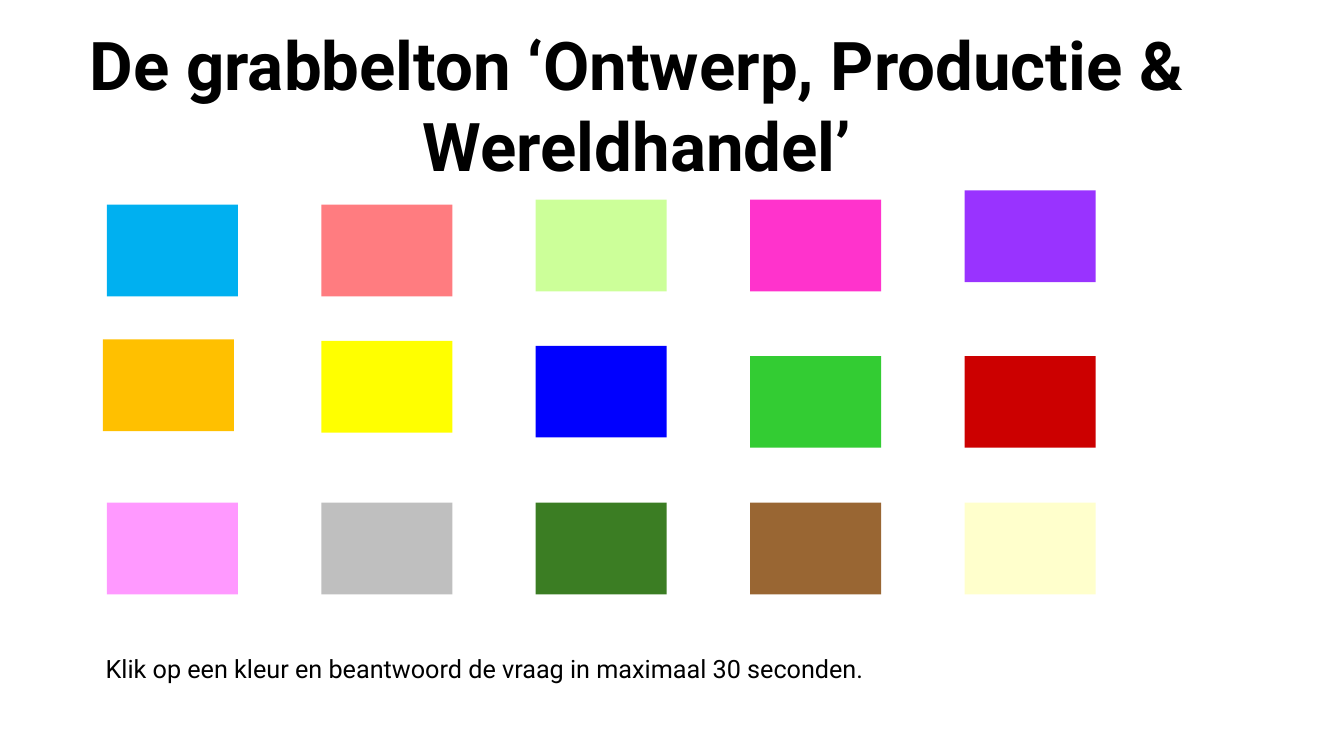
from dataclasses import dataclass

from pptx import Presentation
from pptx import util as u
from pptx.dml import color
from pptx.enum import shapes, text


@dataclass(frozen=True)
class Theme:
    font: str = "Roboto"
    ink: str = "000000"
    background: str = "FFFFFF"
    title_size: float = 48
    caption_size: float = 18


@dataclass(frozen=True)
class Box:
    left: float
    top: float
    width: float
    height: float

    def lengths(self) -> tuple:
        return tuple(u.Pt(value) for value in (self.left, self.top, self.width, self.height))


@dataclass(frozen=True)
class Tile:
    column: int
    top: float
    fill: str
    shift: float = 0


THEME = Theme()
TILE_WIDTH, TILE_HEIGHT = 93.6, 65.5
FIRST_LEFT, COLUMN_PITCH = 76.4, 153.15
TITLE_BOX = Box(-17.28, 12.96, 944.64, 123.84)
CAPTION_BOX = Box(68.4, 462.96, 815.76, 28.8)

TILES = (
    Tile(0, 146.2, "00B0F0"),
    Tile(1, 146.2, "FF7C80"),
    Tile(2, 142.6, "CCFF99"),
    Tile(3, 142.6, "FF33CC"),
    Tile(4, 136, "9933FF"),
    Tile(0, 242.4, "FFC000", shift=-2.9),
    Tile(1, 243.5, "FFFF00"),
    Tile(2, 247, "0000FF"),
    Tile(3, 254.3, "33CC33"),
    Tile(4, 254.3, "CC0000"),
    Tile(0, 359, "FF99FF"),
    Tile(1, 359, "BFBFBF"),
    Tile(2, 359, "3B7D23"),
    Tile(3, 359, "996633"),
    Tile(4, 359, "FFFFCC"),
)


def rgb(value: str) -> color.RGBColor:
    return color.RGBColor.from_string(value)


def draw_tile(slide, tile: Tile) -> None:
    left = FIRST_LEFT + tile.column * COLUMN_PITCH + tile.shift
    box = Box(left, tile.top, TILE_WIDTH, TILE_HEIGHT)
    shape = slide.shapes.add_shape(shapes.MSO_SHAPE.RECTANGLE, *box.lengths())
    shape.shadow.inherit = False
    shape.fill.solid()
    shape.fill.fore_color.rgb = rgb(tile.fill)
    shape.line.fill.background()


def write_text(shape, box: Box, wording: str, size: float, bold: bool, alignment) -> None:
    shape.left, shape.top, shape.width, shape.height = box.lengths()
    frame = shape.text_frame
    frame.text = wording
    frame.word_wrap = True
    frame.auto_size = text.MSO_AUTO_SIZE.SHAPE_TO_FIT_TEXT
    frame.vertical_anchor = text.MSO_ANCHOR.TOP
    paragraph = frame.paragraphs[0]
    paragraph.alignment = alignment
    paragraph.font.name = THEME.font
    paragraph.font.size = u.Pt(size)
    paragraph.font.bold = bold
    paragraph.font.color.rgb = rgb(THEME.ink)


def main() -> None:
    presentation = Presentation()
    presentation.slide_width, presentation.slide_height = u.Pt(960), u.Pt(540)
    slide = presentation.slides.add_slide(presentation.slide_layouts.get_by_name("Title Only"))
    slide.background.fill.solid()
    slide.background.fill.fore_color.rgb = rgb(THEME.background)

    write_text(slide.shapes.title, TITLE_BOX, "De grabbelton ‘Ontwerp, Productie & Wereldhandel’",
               THEME.title_size, True, text.PP_ALIGN.CENTER)
    for tile in TILES:
        draw_tile(slide, tile)
    caption = slide.shapes.add_textbox(*CAPTION_BOX.lengths())
    write_text(caption, CAPTION_BOX, "Klik op een kleur en beantwoord de vraag in maximaal 30 seconden.",
               THEME.caption_size, False, text.PP_ALIGN.LEFT)

    presentation.save("out.pptx")


if __name__ == "__main__":
    main()
